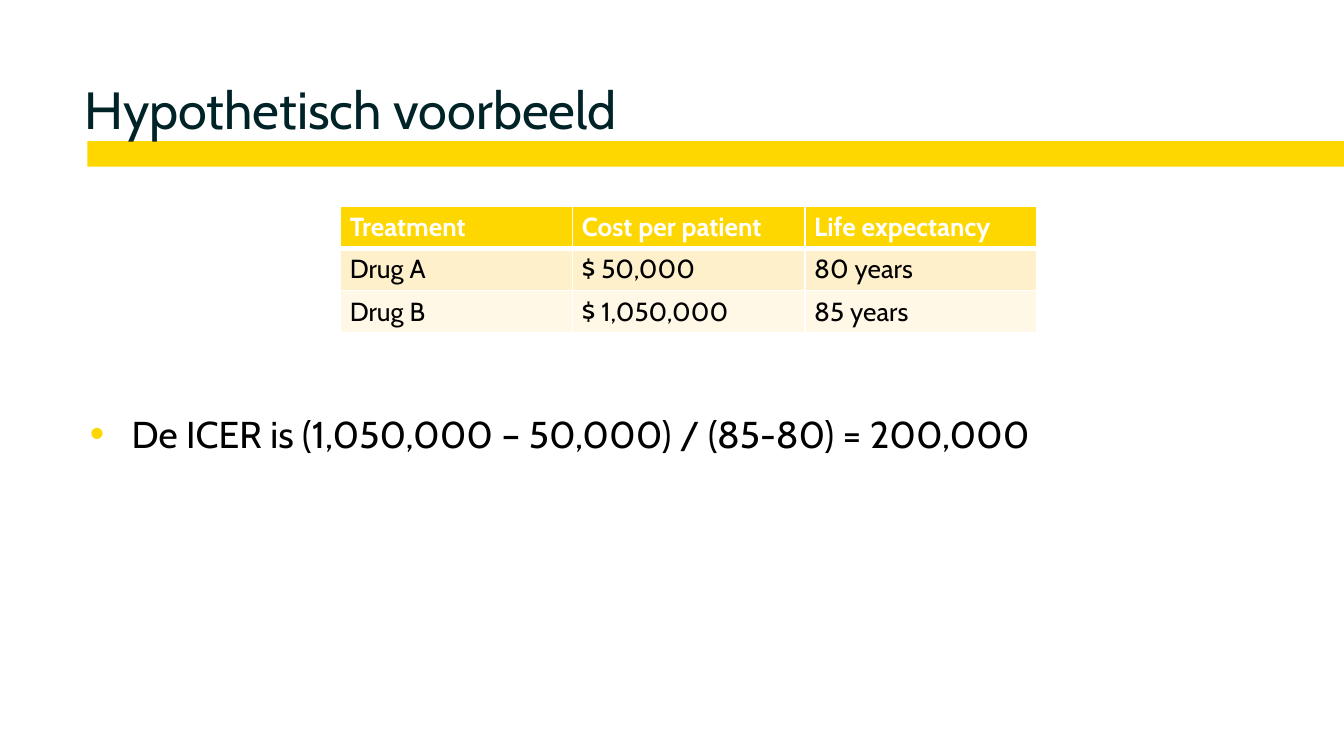
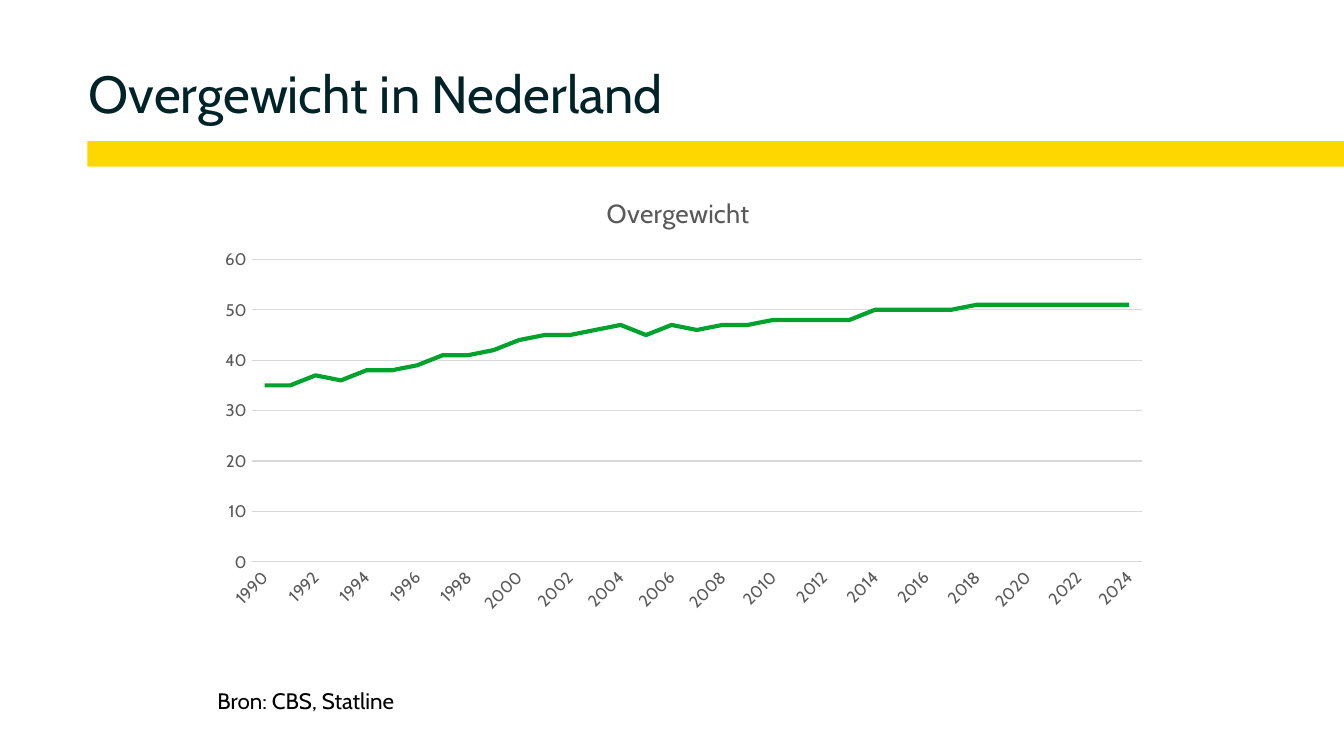
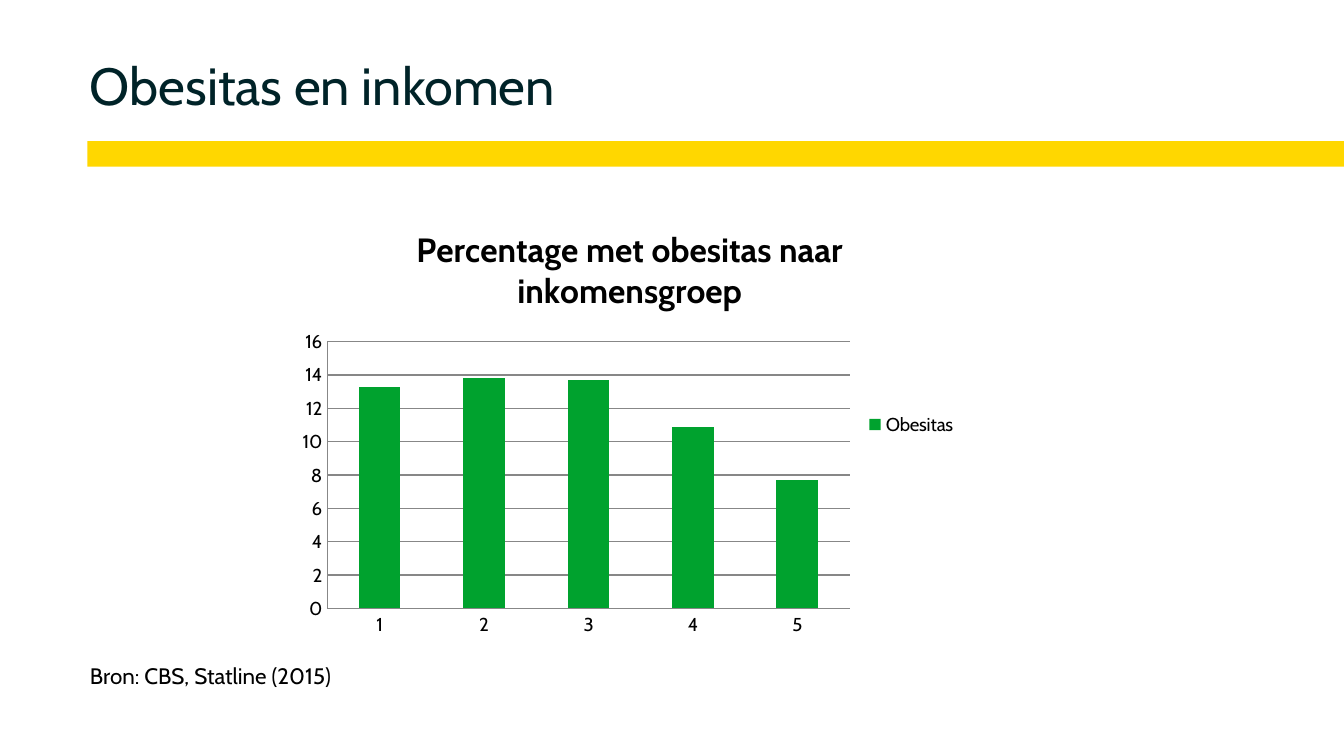
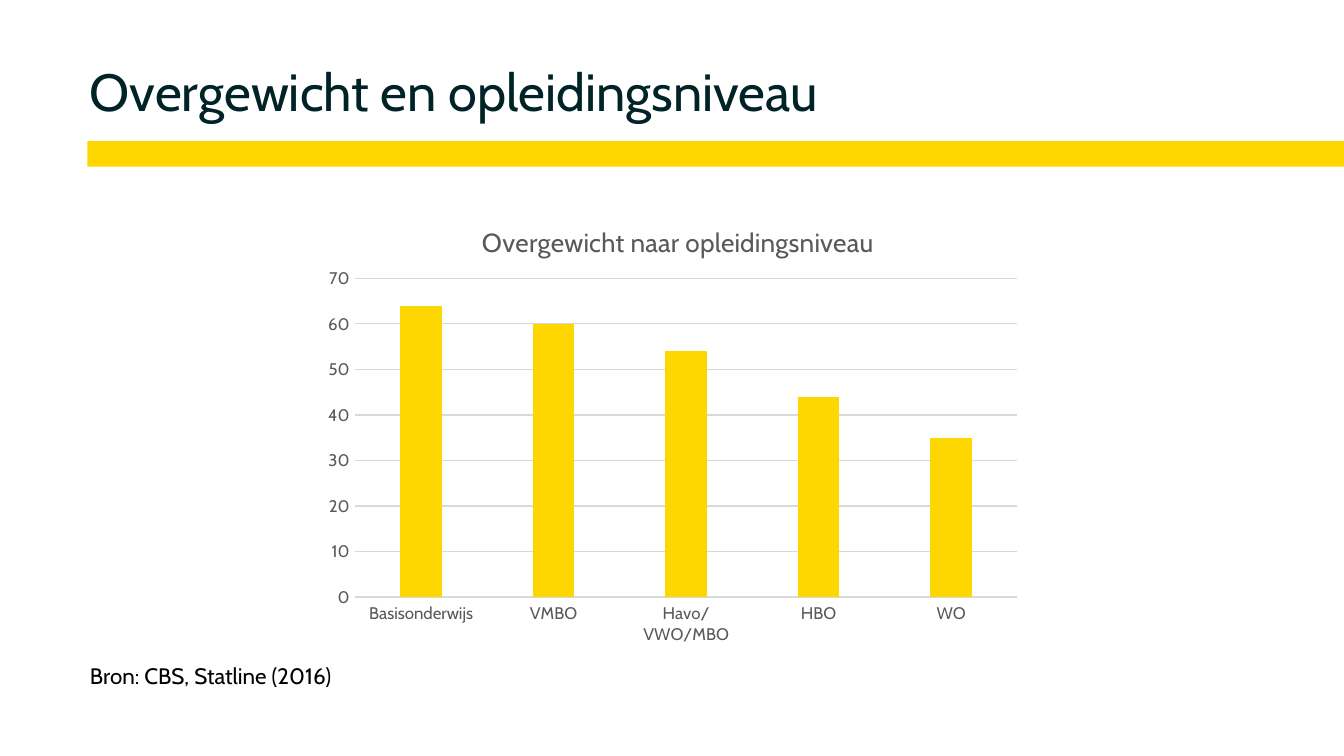
"""Build four slides on cost-effectiveness and overweight in the Netherlands."""
from lxml import etree
from pptx import Presentation
from pptx import util as u
from pptx.chart import data as chartdata
from pptx.dml.color import RGBColor
from pptx.enum import chart as charts, shapes, text
from pptx.oxml import parse_xml
from pptx.oxml.ns import nsdecls, qn

FONT = "Cabin"
INK, BLACK, WHITE = "002328", "000000", "FFFFFF"
YELLOW, GREEN = "FFD700", "00A22E"
CREAM, PALE_CREAM = "FFF0CC", "FFF8E7"
GREY, LIGHT_GREY, MID_GREY = "595959", "D9D9D9", "878787"
BAND = (1.65, 2.67, 23.75, 0.48)
TITLE_HEIGHT, LINE_HEIGHT = 2.06, 0.88
HANG = 0.79

SOFT = {"title_size": 14, "title_bold": False, "title_color": GREY,
        "label_size": 9, "label_color": GREY, "grid": LIGHT_GREY, "value_line": None}
STRONG = {"title_size": 18, "title_bold": True, "title_color": BLACK,
          "label_size": 10, "label_color": BLACK, "grid": MID_GREY, "value_line": MID_GREY}

SLIDES = [
    {"title": "Hypothetisch voorbeeld", "title_at": (1.6, 1.52, 17),
     "table": {
         "at": (6.43, 3.89), "column": 4.39, "row": 0.78,
         "rows": [("Treatment", "Cost per patient", "Life expectancy"),
                  ("Drug A", "$ 50,000", "80 years"),
                  ("Drug B", "$ 1,050,000", "85 years")]},
     "bullet": ("De ICER is (1,050,000 – 50,000) / (85-80) = 200,000", (1.7, 7.74))},
    {"title": "Overgewicht in Nederland", "title_at": (1.68, 1.22, 17),
     "chart": {
         "kind": charts.XL_CHART_TYPE.LINE_STACKED, "style": SOFT, "color": GREEN,
         "at": (3.25, 3.1, 18.9, 10.03), "title": "Overgewicht", "series": "Series 1",
         "categories": [str(year) for year in range(1990, 2025)],
         "values": [35, 35, 37, 36, 38, 38, 39, 41, 41, 42, 44, 45, 45, 46, 47, 45, 47, 46,
                    47, 47, 48, 48, 48, 48, 50, 50, 50, 50, 51, 51, 51, 51, 51, 51, 51],
         "top": 60, "step": 10, "title_place": (0.43, 0.05),
         "plot_place": (0.08, 0.18, 0.89, 0.57)},
     "source": ("Bron: CBS, Statline", (4.11, 12.62))},
    {"title": "Obesitas en inkomen", "title_at": (1.7, 1.07, 22.66),
     "chart": {
         "kind": charts.XL_CHART_TYPE.COLUMN_CLUSTERED, "style": STRONG, "color": GREEN,
         "at": (5.46, 3.86, 12.88, 8.33), "series": "Obesitas",
         "title": "Percentage met obesitas naar inkomensgroep",
         "categories": ["1", "2", "3", "4", "5"], "values": [13.3, 13.8, 13.7, 10.9, 7.7],
         "top": 16, "step": 2, "gap": 150, "overlap": 0, "legend": True},
     "source": ("Bron: CBS, Statline (2015)", (1.7, 12.15))},
    {"title": "Overgewicht en opleidingsniveau", "title_at": (1.7, 1.17, 22.66),
     "chart": {
         "kind": charts.XL_CHART_TYPE.COLUMN_CLUSTERED, "style": SOFT, "color": YELLOW,
         "at": (5.89, 3.71, 13.61, 8.61), "series": "Series 1",
         "title": "Overgewicht naar opleidingsniveau",
         "categories": ["Basisonderwijs", "VMBO", "Havo/VWO/MBO", "HBO", "WO"],
         "values": [64, 60, 54, 44, 35], "top": 70, "step": 10, "gap": 219, "overlap": -27,
         "title_place": (0.23, 0.05), "plot_place": (0.06, 0.18, 0.92, 0.7)},
     "source": ("Bron: CBS, Statline (2016)", (1.7, 12.15))},
]


def rgb(value):
    return RGBColor.from_string(value)


def cm(*lengths):
    return [u.Cm(length) for length in lengths]


def style_font(font, size, color, bold=False):
    font.name, font.size, font.bold = FONT, u.Pt(size), bold
    font.color.rgb = rgb(color)


def write(frame, words, size, color, bold=False, spacing=None):
    para = frame.paragraphs[0]
    para.alignment = text.PP_ALIGN.LEFT
    if spacing:
        para.line_spacing = u.Pt(spacing)
    span = para.add_run()
    span.text = words
    style_font(span.font, size, color, bold)
    return para


def reset_frame(frame):
    frame.word_wrap = True
    frame.auto_size = text.MSO_AUTO_SIZE.NONE
    frame.vertical_anchor = text.MSO_ANCHOR.TOP
    frame.margin_left = frame.margin_top = frame.margin_right = frame.margin_bottom = 0


def add_title(page, words, at):
    box = page.shapes.title
    left, top, width = at
    box.left, box.top, box.width, box.height = cm(left, top, width, TITLE_HEIGHT)
    reset_frame(box.text_frame)
    write(box.text_frame, words, 28, INK, spacing=32)


def add_line_of_text(page, words, at, size):
    box = page.shapes.add_textbox(*cm(*at, 22.66 if at[0] < 2 else 19, LINE_HEIGHT))
    reset_frame(box.text_frame)
    return write(box.text_frame, words, size, BLACK, spacing=25)


def add_bullet(page, words, at):
    props = add_line_of_text(page, words, at, 20)._p.get_or_add_pPr()
    props.set("marL", str(u.Cm(HANG)))
    props.set("indent", str(-u.Cm(HANG)))
    color = etree.SubElement(props, qn("a:buClr"))
    etree.SubElement(color, qn("a:srgbClr"), val=YELLOW)
    etree.SubElement(props, qn("a:buSzPct"), val="110000")
    etree.SubElement(props, qn("a:buFont"), typeface="Arial")
    etree.SubElement(props, qn("a:buChar"), char="•")


def set_borders(cell, bottom, top):
    props = cell._tc.get_or_add_tcPr()
    widths = {"lnL": 1, "lnR": 1, "lnT": top, "lnB": bottom}
    for index, (side, points) in enumerate(widths.items()):
        props.insert(index, parse_xml(
            f'<a:{side} {nsdecls("a")} w="{u.Pt(points)}"><a:solidFill>'
            f'<a:srgbClr val="{WHITE}"/></a:solidFill></a:{side}>'))


def add_treatment_table(page, at, column, row, rows):
    count = len(rows[0])
    size = cm(*at, column * count, row * len(rows))
    table = page.shapes.add_table(len(rows), count, *size).table
    for r, words in enumerate(rows):
        for c, word in enumerate(words):
            cell = table.cell(r, c)
            cell.margin_left = cell.margin_right = u.Cm(0.18)
            cell.margin_top = cell.margin_bottom = u.Cm(0.1)
            cell.fill.solid()
            cell.fill.fore_color.rgb = rgb((YELLOW, CREAM, PALE_CREAM)[r])
            write(cell.text_frame, word, 14, BLACK if r else WHITE, bold=r == 0)
            set_borders(cell, bottom=1 if r else 3, top=3 if r == 1 else 1)


def layout_xml(place, inner=False):
    target = '<c:layoutTarget val="inner"/>' if inner else ""
    modes = "".join(f'<c:{axis}Mode val="edge"/>' for axis in "xy")
    sizes = "".join(f'<c:{name} val="{value}"/>' for name, value in zip("xywh", place))
    return parse_xml(f'<c:layout {nsdecls("c")}><c:manualLayout>{target}{modes}{sizes}'
                     "</c:manualLayout></c:layout>")


def place_part(part, layout, index):
    for old in part.findall(qn("c:layout")):
        part.remove(old)
    part.insert(index, layout)


def style_line(line, color):
    if color:
        line.color.rgb = rgb(color)
        line.width = u.Pt(0.75)
    else:
        line.fill.background()


def style_axes(chart, style, top, step):
    values = chart.value_axis
    values.minimum_scale, values.maximum_scale, values.major_unit = 0, top, step
    values.has_major_gridlines = True
    style_line(values.major_gridlines.format.line, style["grid"])
    for axis, color in ((values, style["value_line"]), (chart.category_axis, style["grid"])):
        axis.major_tick_mark = axis.minor_tick_mark = charts.XL_TICK_MARK.NONE
        style_font(axis.tick_labels.font, style["label_size"], style["label_color"])
        style_line(axis.format.line, color)


def add_data_chart(page, kind, style, color, at, title, series, categories, values, top, step,
                   gap=None, overlap=None, legend=False, title_place=None, plot_place=None):
    data = chartdata.CategoryChartData()
    data.categories = categories
    data.add_series(series, values)
    chart = page.shapes.add_chart(kind, *cm(*at), data).chart
    style_font(chart.font, 10, BLACK)
    chart.has_title = True
    span = chart.chart_title.text_frame.paragraphs[0].add_run()
    span.text = title
    style_font(span.font, style["title_size"], style["title_color"], style["title_bold"])
    chart.has_legend = legend
    if legend:
        chart.legend.position = charts.XL_LEGEND_POSITION.RIGHT
        chart.legend.include_in_layout = False
    style_axes(chart, style, top, step)
    plot = chart.plots[0]
    plot.vary_by_categories = False
    drawn = plot.series[0]
    if gap is None:
        drawn.smooth = False
        drawn.format.line.color.rgb = rgb(color)
        drawn.format.line.width = u.Pt(2.25)
        chart.element.xpath("c:chart/c:plotArea/c:catAx/c:txPr/a:bodyPr")[0].set("rot", "-2700000")
    else:
        plot.gap_width, plot.overlap = gap, overlap
        drawn.format.fill.solid()
        drawn.format.fill.fore_color.rgb = rgb(color)
    if title_place:
        place_part(chart.element.xpath("c:chart/c:title")[0], layout_xml(title_place), 1)
    if plot_place:
        place_part(chart.element.xpath("c:chart/c:plotArea")[0], layout_xml(plot_place, True), 0)


def add_band(page):
    band = page.shapes.add_shape(shapes.MSO_SHAPE.RECTANGLE, *cm(*BAND))
    band.shadow.inherit = False
    band.fill.solid()
    band.fill.fore_color.rgb = rgb(YELLOW)
    band.line.fill.background()
    page.shapes.element.remove(band.element)
    page.shapes.element.insert(2, band.element)


def main():
    deck = Presentation()
    deck.slide_width, deck.slide_height = cm(25.4, 14.29)
    for content in SLIDES:
        page = deck.slides.add_slide(deck.slide_layouts[5])
        add_band(page)
        add_title(page, content["title"], content["title_at"])
        if "table" in content:
            add_treatment_table(page, **content["table"])
        if "bullet" in content:
            add_bullet(page, *content["bullet"])
        if "source" in content:
            add_line_of_text(page, *content["source"], size=12)
        if "chart" in content:
            add_data_chart(page, **content["chart"])
    deck.save("out.pptx")


if __name__ == "__main__":
    main()
